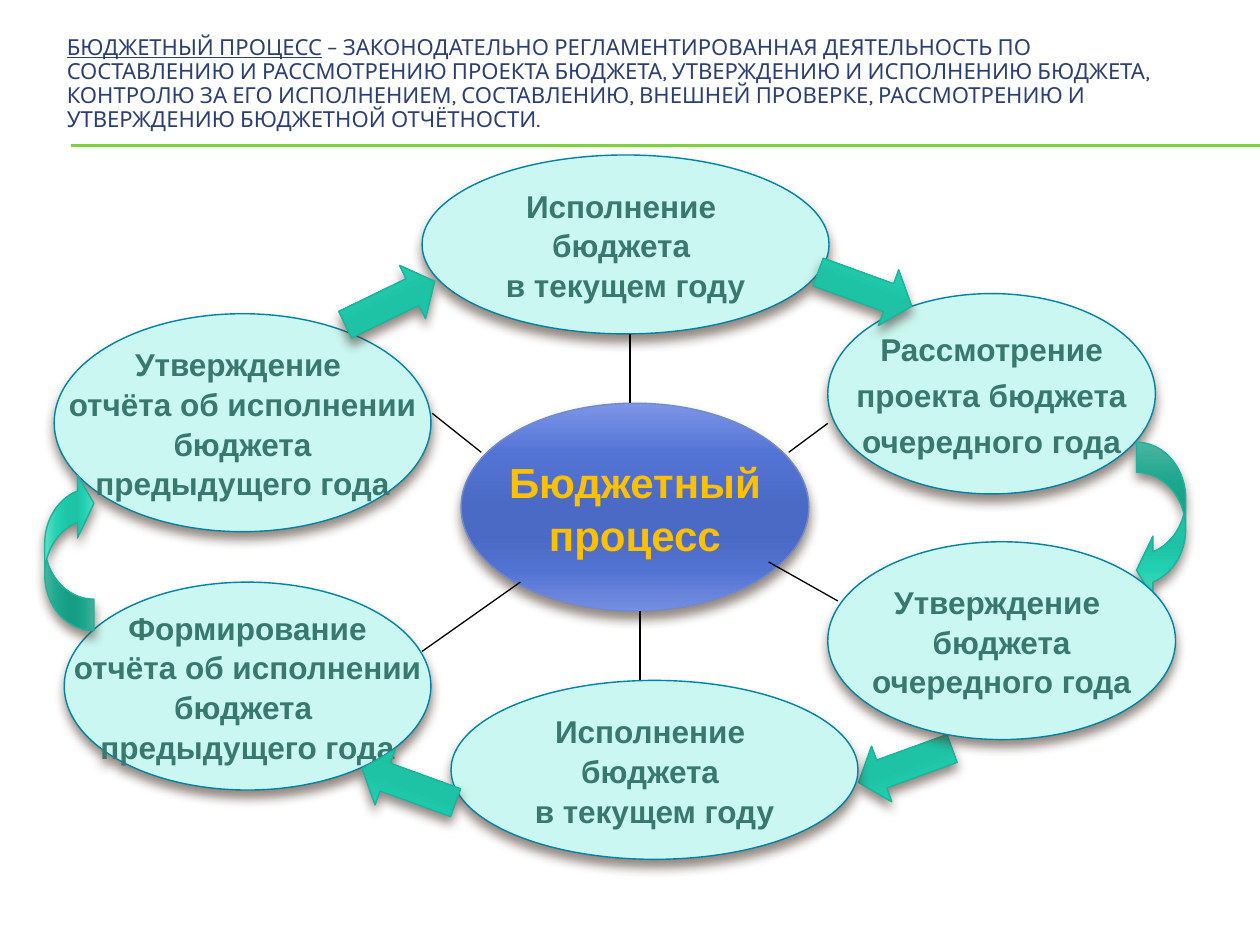
import pptx
import pptx.util
import pptx.dml.color
import pptx.enum.shapes
import pptx.enum.text
import pptx.oxml
import pptx.oxml.ns
from lxml import etree

SHAPE = pptx.enum.shapes.MSO_SHAPE
ALIGN = pptx.enum.text.PP_ALIGN
ANCHOR = pptx.enum.text.MSO_ANCHOR
COLORS = {
    "title": "2C3F71", "rule": "7FD13B", "stage": "CAF7F1", "stage_line": "0082A5",
    "stage_text": "37796E", "core_line": "738AC8", "core_text": "FFC000",
    "arrow_line": "1AB39F", "link": "000000", "shadow": "4E3B30",
}
STOPS = (0, 25, 50, 65, 80, 100)
GRADIENTS = {
    "arrow": ("5EE1C6", "22D1B2", "1EC3A5", "1EC3A5", "22D0B1", "55DBC0"),
    "core": ("7C95E7", "5373D4", "4B6AC5", "4B6AC5", "5373D2", "748EE1"),
}
COLUMNS, ROWS = 100, 75


def rgb(name):
    return pptx.dml.color.RGBColor.from_string(COLORS[name])


def drawing(tag, body):
    return pptx.oxml.parse_xml(f'<a:{tag} {pptx.oxml.ns.nsdecls("a")}>{body}</a:{tag}>')


class Board:
    """Holds the current slide and its style; lengths are grid columns and rows."""

    def __init__(self, deck):
        self.page = deck.slides.add_slide(deck.slide_layouts[5])
        self.column = deck.slide_width / COLUMNS
        self.row = deck.slide_height / ROWS

    def place(self, *lengths):
        return [round(length * (self.row if i % 2 else self.column))
                for i, length in enumerate(lengths)]

    def style(self, span, size, font, color, bold=False):
        span.font.size = pptx.util.Pt(size)
        span.font.name = font
        span.font.bold = bold
        span.font.color.rgb = rgb(color)

    def title(self, at, term, definition):
        box = self.page.shapes.title
        box.left, box.top, box.width, box.height = self.place(*at)
        frame = box.text_frame
        frame.word_wrap = True
        frame.auto_size = pptx.enum.text.MSO_AUTO_SIZE.NONE
        frame.vertical_anchor = ANCHOR.TOP
        frame.margin_top = pptx.util.Inches(0.08)
        para = frame.paragraphs[0]
        para.alignment = ALIGN.LEFT
        para.line_spacing = 0.9
        for text, underline in ((term, True), (definition, False)):
            span = para.add_run()
            span.text = text
            self.style(span, 12.6, "Karla", "title")
            span.font.underline = underline

    def line(self, start, end, color="link"):
        link = self.page.shapes.add_connector(
            pptx.enum.shapes.MSO_CONNECTOR.STRAIGHT, *self.place(*start, *end))
        link.line.color.rgb = rgb(color)
        link.line.width = pptx.util.Pt(0.75)
        link._element.spPr.append(drawing("effectLst", ""))

    def shape(self, kind, at, line, fill=None, gradient=None):
        box = self.page.shapes.add_shape(kind, *self.place(*at))
        box.line.color.rgb = rgb(line)
        box.line.width = pptx.util.Pt(0.79)
        properties = box._element.spPr
        if fill:
            box.fill.solid()
            box.fill.fore_color.rgb = rgb(fill)
        else:
            stops = "".join(f'<a:gs pos="{pos * 1000}"><a:srgbClr val="{color}"/></a:gs>'
                            for pos, color in zip(STOPS, GRADIENTS[gradient]))
            properties.find(pptx.oxml.ns.qn("a:ln")).addprevious(drawing(
                "gradFill", f'<a:gsLst>{stops}</a:gsLst><a:lin ang="5400000" scaled="0"/>'))
        # Soft shadow straight below
        box.shadow.inherit = False
        effects = properties.find(pptx.oxml.ns.qn("a:effectLst"))
        shadow = etree.SubElement(effects, pptx.oxml.ns.qn("a:outerShdw"), blurRad="76200",
                                  dist="50800", dir="5400000", rotWithShape="0")
        color = etree.SubElement(shadow, pptx.oxml.ns.qn("a:srgbClr"), val=COLORS["shadow"])
        etree.SubElement(color, pptx.oxml.ns.qn("a:alpha"), val="60000")
        return box

    def label(self, box, text, size, color, before=0):
        frame = box.text_frame
        frame.text = text
        frame.word_wrap = False
        frame.vertical_anchor = ANCHOR.MIDDLE
        for para in frame.paragraphs:
            para.alignment = ALIGN.CENTER
            para.line_spacing = 1.05
            para.space_before = pptx.util.Pt(before)
            for span in para.runs:
                self.style(span, size, "Arial", color, bold=True)

    def stage(self, at, text, before=0):
        box = self.shape(SHAPE.OVAL, at, "stage_line", fill="stage")
        self.label(box, text, 18, "stage_text", before)

    def core(self, at, text):
        box = self.shape(SHAPE.OVAL, at, "core_line", gradient="core")
        self.label(box, text, 24, "core_text")

    def arrow(self, at, rotation=0, kind=SHAPE.RIGHT_ARROW, adjust=(0.5, 0.416)):
        box = self.shape(kind, at, "arrow_line", gradient="arrow")
        box.rotation = rotation
        for i, value in enumerate(adjust):
            box.adjustments[i] = value

    def straight_arrow(self, left, top, rotation):
        self.arrow((left, top, 7.9, 4.7), rotation)


def main():
    deck = pptx.Presentation()
    deck.slide_width = pptx.util.Inches(10)
    deck.slide_height = pptx.util.Inches(7.5)
    board = Board(deck)

    # Definition and double rule
    for row in (11.5, 11.6):
        board.line((5.6, row), (100, row), "rule")
    board.title((4.3, 2.1, 89.9, 11.8), "БЮДЖЕТНЫЙ ПРОЦЕСС",
                " – ЗАКОНОДАТЕЛЬНО РЕГЛАМЕНТИРОВАННАЯ ДЕЯТЕЛЬНОСТЬ ПО СОСТАВЛЕНИЮ И "
                "РАССМОТРЕНИЮ ПРОЕКТА БЮДЖЕТА, УТВЕРЖДЕНИЮ И ИСПОЛНЕНИЮ БЮДЖЕТА, КОНТРОЛЮ "
                "ЗА ЕГО ИСПОЛНЕНИЕМ, СОСТАВЛЕНИЮ, ВНЕШНЕЙ ПРОВЕРКЕ, РАССМОТРЕНИЮ И "
                "УТВЕРЖДЕНИЮ БЮДЖЕТНОЙ ОТЧЁТНОСТИ.")

    # Right side of the cycle
    board.stage((65.7, 23.3, 26, 15.9),
                "Рассмотрение\nпроекта бюджета\nочередного года", before=3.6)
    board.arrow((90.2, 35.1, 3.9, 12.6), kind=SHAPE.CURVED_LEFT_ARROW,
                adjust=(0.613, 1.253, 0.333))
    board.straight_arrow(67.9, 58.4, 160)
    board.stage((65.7, 43, 27.6, 15.7), "Утверждение \nбюджета\nочередного года")

    # Budget execution, bottom and top
    for left, top in ((35.8, 54), (33.5, 12.3)):
        board.stage((left, top, 32.3, 14.2), "Исполнение \nбюджета \nв текущем году")

    # Centre
    board.core((36.6, 32, 27.6, 16.5), "Бюджетный\nпроцесс")

    # Left side of the cycle
    board.stage((4.3, 24.9, 29.9, 17.3),
                "Утверждение \nотчёта об исполнении\n бюджета \nпредыдущего года")
    board.straight_arrow(27, 21.7, 334.1)
    board.stage((5.1, 46.2, 29.1, 16.5),
                "Формирование\nотчёта об исполнении\nбюджета \nпредыдущего года")
    board.straight_arrow(64.7, 20.6, 20)
    board.straight_arrow(28.5, 60, 200)
    board.arrow((-0.8, 41.8, 12.6, 3.9), 270, SHAPE.CURVED_DOWN_ARROW, (0.64, 1.279, 0.333))

    # Links from the centre to the stages
    for start, end in (
        ((50.8, 48.5), (50.8, 54)), ((41.3, 46.2), (33.5, 51.7)),
        ((34.3, 32.8), (38.2, 35.9)), ((50, 26.5), (50, 32)),
        ((62.6, 35.9), (65.7, 33.6)), ((61, 44.6), (66.5, 47.7)),
    ):
        board.line(start, end)

    deck.save("out.pptx")


if __name__ == "__main__":
    main()
